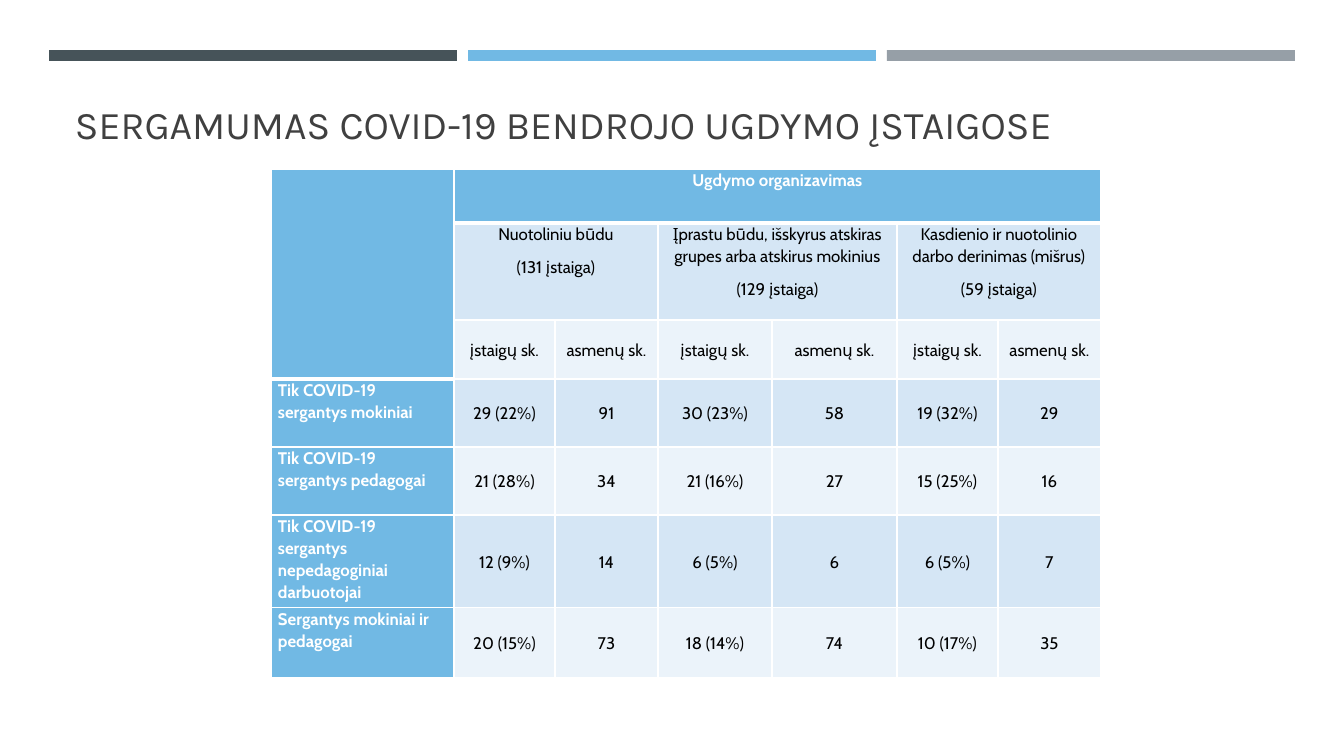
import dataclasses

import lxml.etree
import pptx
import pptx.dml.color
import pptx.enum.shapes
import pptx.enum.text
import pptx.oxml.ns
import pptx.util

TITLE = "SERGAMUMAS COVID-19 BENDROJO UGDYMO ĮSTAIGOSE"
TABLE_HEADING = "Ugdymo organizavimas"
TEACHING_MODES = [
    ("Nuotoliniu būdu", "(131 įstaiga)"),
    ("Įprastu būdu, išskyrus atskiras grupes arba atskirus mokinius", "(129 įstaiga)"),
    ("Kasdienio ir nuotolinio darbo derinimas (mišrus)", "(59 įstaiga)"),
]
MEASURES = ["įstaigų sk.", "asmenų sk."]
CASES = [
    ("Tik COVID-19 sergantys mokiniai", "29 (22%)", "91", "30 (23%)", "58", "19 (32%)", "29"),
    ("Tik COVID-19 sergantys pedagogai", "21 (28%)", "34", "21 (16%)", "27", "15 (25%)", "16"),
    ("Tik COVID-19 sergantys nepedagoginiai darbuotojai",
     "12 (9%)", "14", "6 (5%)", "6", "6 (5%)", "7"),
    ("Sergantys mokiniai ir pedagogai", "20 (15%)", "73", "18 (14%)", "74", "10 (17%)", "35"),
]

SLIDE_SIZE = (1344, 756)
BAR_LEFT, BAR_TOP, BAR_WIDTH, BAR_HEIGHT, BAR_GAP = 49, 50, 408, 11, 11
TITLE_BOX = (65, 78, 1216, 74)
TABLE_LEFT, TABLE_TOP = 271, 169
COLUMN_WIDTHS = [183, 101, 103, 114, 125, 101, 103]
ROW_HEIGHTS = [54, 97, 59, 68, 68, 93, 70]
CELL_INSET = 7
HEADER_ROWS = 3


@dataclasses.dataclass(frozen=True)
class Theme:
    bars: tuple = ("465359", "71B9E4", "969FA7")
    accent: str = "71B9E4"
    bands: tuple = ("D5E6F5", "EBF3FA")
    title: str = "404040"
    dark: str = "000000"
    light: str = "FFFFFF"
    title_font: str = "Karla"
    table_font: str = "Cabin"
    title_size: int = 28
    table_size: int = 12
    thin: int = 1
    thick: int = 3


THEME = Theme()
ALIGN = pptx.enum.text.PP_ALIGN
ANCHOR = pptx.enum.text.MSO_ANCHOR


def px(length):
    return pptx.util.Emu(round(length * 914400 / 100.8))


def rgb(colour):
    return pptx.dml.color.RGBColor.from_string(colour)


def add_span(para, text, font, size, colour, bold=False):
    span = para.add_run()
    span.text = text
    span.font.name = font
    span.font.size = pptx.util.Pt(size)
    span.font.bold = bold
    span.font.color.rgb = rgb(colour)


def add_bars(page):
    for index, colour in enumerate(THEME.bars):
        left = BAR_LEFT + index * (BAR_WIDTH + BAR_GAP)
        bar = page.shapes.add_shape(
            pptx.enum.shapes.MSO_SHAPE.RECTANGLE,
            px(left), px(BAR_TOP), px(BAR_WIDTH), px(BAR_HEIGHT))
        bar.shadow.inherit = False
        bar.fill.solid()
        bar.fill.fore_color.rgb = rgb(colour)
        bar.line.fill.background()


def add_title(page):
    box = page.shapes.add_textbox(*map(px, TITLE_BOX))
    box.text_frame.word_wrap = True
    box.text_frame.vertical_anchor = ANCHOR.BOTTOM
    add_span(box.text_frame.paragraphs[0], TITLE,
             THEME.title_font, THEME.title_size, THEME.title)


def set_borders(cell, top, bottom):
    """Draw light edges; top and bottom are widths in points."""
    properties = cell._tc.get_or_add_tcPr()
    widths = {"a:lnL": THEME.thin, "a:lnR": THEME.thin, "a:lnT": top, "a:lnB": bottom}
    qn = pptx.oxml.ns.qn
    for tag, width in widths.items():
        edge = lxml.etree.SubElement(properties, qn(tag), w=str(pptx.util.Pt(width)))
        fill = lxml.etree.SubElement(edge, qn("a:solidFill"))
        lxml.etree.SubElement(fill, qn("a:srgbClr"), val=THEME.light)


def style_cell(cell, row, column):
    heading = row == 0 or column == 0
    last_heading_row = HEADER_ROWS - 1 if column == 0 else 0
    set_borders(cell,
                THEME.thick if row == last_heading_row + 1 else THEME.thin,
                THEME.thick if row == last_heading_row or row == column == 0 else THEME.thin)
    cell.fill.solid()
    cell.fill.fore_color.rgb = rgb(THEME.accent if heading else THEME.bands[(row - 1) % 2])
    cell.margin_left = cell.margin_right = px(CELL_INSET)
    cell.margin_top = cell.margin_bottom = 0
    cell.vertical_anchor = ANCHOR.TOP if heading or row == 1 else ANCHOR.MIDDLE


def write_cell(cell, lines, row, column):
    heading = row == 0 or column == 0
    for index, line in enumerate(lines):
        frame = cell.text_frame
        para = frame.add_paragraph() if index else frame.paragraphs[0]
        para.alignment = ALIGN.LEFT if column == 0 else ALIGN.CENTER
        para.line_spacing = 1.07
        para.space_after = pptx.util.Pt(8)
        add_span(para, line, THEME.table_font, THEME.table_size,
                 THEME.light if heading else THEME.dark, heading)


def table_texts():
    """Map (row, column) to the lines of that cell."""
    texts = {(0, 1): (TABLE_HEADING,)}
    for index, mode in enumerate(TEACHING_MODES):
        first = 1 + index * len(MEASURES)
        texts[1, first] = mode
        for offset, measure in enumerate(MEASURES):
            texts[2, first + offset] = (measure,)
    for row, case in enumerate(CASES, HEADER_ROWS):
        for column, value in enumerate(case):
            texts[row, column] = (value,)
    return texts


def add_case_table(page):
    table = page.shapes.add_table(
        len(ROW_HEIGHTS), len(COLUMN_WIDTHS), px(TABLE_LEFT), px(TABLE_TOP),
        px(sum(COLUMN_WIDTHS)), px(sum(ROW_HEIGHTS))).table
    table.first_row = table.horz_banding = False
    for column, width in zip(table.columns, COLUMN_WIDTHS):
        column.width = px(width)
    for row, height in zip(table.rows, ROW_HEIGHTS):
        row.height = px(height)
    for row in range(len(ROW_HEIGHTS)):
        for column in range(len(COLUMN_WIDTHS)):
            style_cell(table.cell(row, column), row, column)

    table.cell(0, 0).merge(table.cell(HEADER_ROWS - 1, 0))
    table.cell(0, 1).merge(table.cell(0, len(COLUMN_WIDTHS) - 1))
    for first in range(1, len(COLUMN_WIDTHS), len(MEASURES)):
        table.cell(1, first).merge(table.cell(1, first + len(MEASURES) - 1))
    for (row, column), lines in table_texts().items():
        write_cell(table.cell(row, column), lines, row, column)


def main():
    deck = pptx.Presentation()
    deck.slide_width, deck.slide_height = map(px, SLIDE_SIZE)
    page = deck.slides.add_slide(deck.slide_layouts[6])
    add_bars(page)
    add_title(page)
    add_case_table(page)
    deck.save("out.pptx")


if __name__ == "__main__":
    main()
